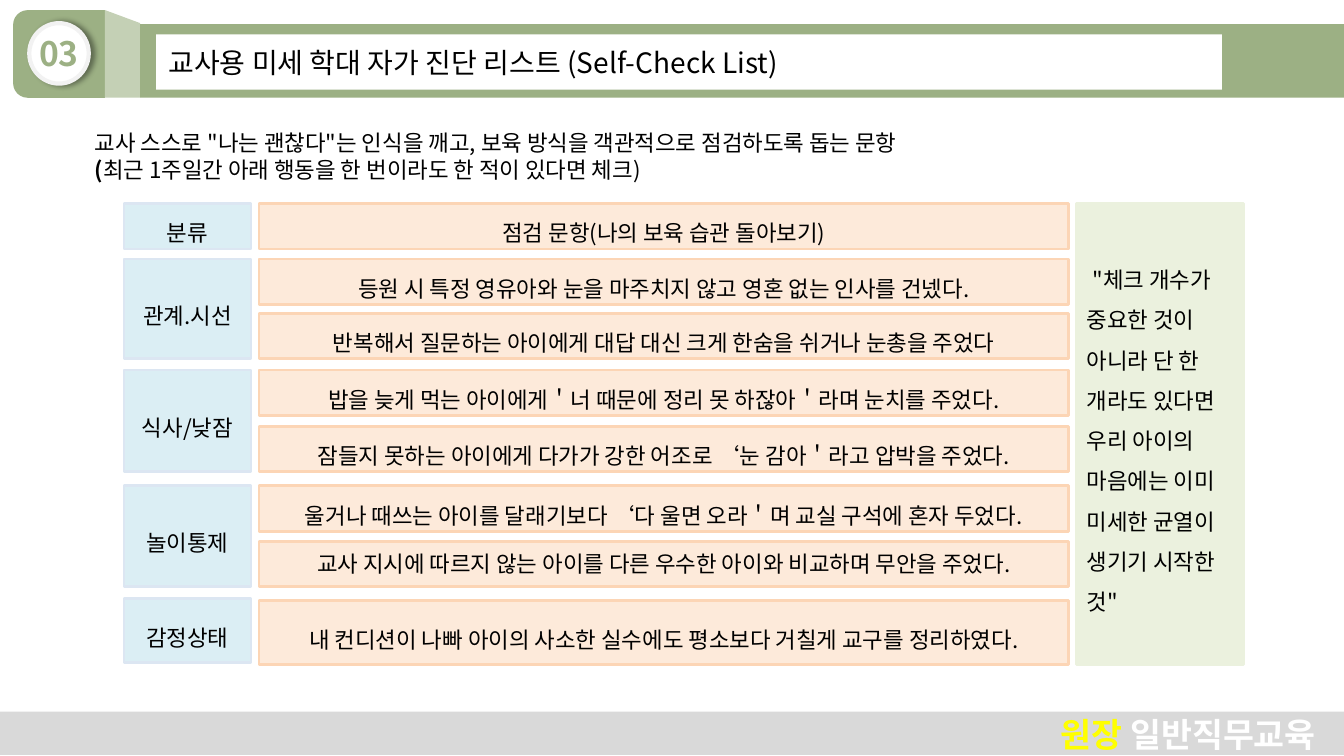
from typing import NamedTuple

from lxml import etree
from pptx import Presentation
from pptx.dml.color import RGBColor
from pptx.enum import shapes, text
from pptx.oxml import ns
from pptx.util import Inches, Pt

BLACK = RGBColor(0x00, 0x00, 0x00)
WHITE = RGBColor(0xFF, 0xFF, 0xFF)
YELLOW = RGBColor(0xFF, 0xFF, 0x00)
GREEN = RGBColor(0x9C, 0xB0, 0x84)
PALE_GREEN = RGBColor(0xC4, 0xD0, 0xB5)
FOOTER_GREY = RGBColor(0xD9, 0xD9, 0xD9)
BADGE_RING = RGBColor(0xF2, 0xF2, 0xF2)
NOTE_GREEN = RGBColor(0xEB, 0xF1, 0xDE)
ITEM_FILL, ITEM_LINE = RGBColor(0xFD, 0xEA, 0xDA), RGBColor(0xFC, 0xD5, 0xB5)
GROUP_FILL, GROUP_LINE = RGBColor(0xDB, 0xEE, 0xF4), RGBColor(0xDC, 0xE6, 0xF2)

KOREAN_FONT = "Noto Sans CJK KR"
BADGE_FONT = "Noto Sans CJK SC"
RECTANGLE = shapes.MSO_SHAPE.RECTANGLE
LEFT, CENTER, RIGHT = text.PP_ALIGN.LEFT, text.PP_ALIGN.CENTER, text.PP_ALIGN.RIGHT


class Box(NamedTuple):
    left: float
    top: float
    width: float
    height: float


class Column(NamedTuple):
    left: float
    width: float
    fill: RGBColor
    line: RGBColor


class Cell(NamedTuple):
    column: Column
    top: float
    height: float
    label: str
    line_spacing: float = 1.5


GROUPS = Column(1.23, 1.26, GROUP_FILL, GROUP_LINE)
ITEMS = Column(2.57, 8.03, ITEM_FILL, ITEM_LINE)
NOTE = Column(10.68, 1.65, NOTE_GREEN, NOTE_GREEN)
ROW = 0.45

CELLS = [
    Cell(GROUPS, 2.02, ROW, "분류"),
    Cell(GROUPS, 2.57, 0.99, "관계.시선"),
    Cell(GROUPS, 3.67, 1.01, "식사/낮잠"),
    Cell(GROUPS, 4.82, 1.0, "놀이통제"),
    Cell(GROUPS, 5.94, 0.63, "감정상태"),
    Cell(ITEMS, 2.02, ROW, "점검 문항(나의 보육 습관 돌아보기)"),
    Cell(ITEMS, 2.57, ROW, "등원 시 특정 영유아와 눈을 마주치지 않고 영혼 없는 인사를 건넸다."),
    Cell(ITEMS, 3.11, ROW, "반복해서 질문하는 아이에게 대답 대신 크게 한숨을 쉬거나 눈총을 주었다"),
    Cell(ITEMS, 3.67, ROW, "밥을 늦게 먹는 아이에게＇너 때문에 정리 못 하잖아＇라며 눈치를 주었다."),
    Cell(ITEMS, 4.23, ROW, "잠들지 못하는 아이에게 다가가 강한 어조로 ‘눈 감아＇라고 압박을 주었다."),
    Cell(ITEMS, 4.82, ROW, "울거나 때쓰는 아이를 달래기보다 ‘다 울면 오라＇며 교실 구석에 혼자 두었다."),
    Cell(ITEMS, 5.37, ROW, "교사 지시에 따르지 않는 아이를 다른 우수한 아이와 비교하며 무안을 주었다.", 1.0),
    Cell(ITEMS, 5.96, 0.63, "내 컨디션이 나빠 아이의 사소한 실수에도 평소보다 거칠게 교구를 정리하였다."),
]
NOTE_TEXT = (
    "\"체크 개수가 중요한 것이 아니라 단 한 개라도 있다면\n"
    "우리 아이의 마음에는 이미 미세한 균열이 생기기 시작한 것\""
)


def paint(shape, fill: RGBColor, line: RGBColor | None = None, line_width: float = 2) -> None:
    shape.shadow.inherit = False
    shape.fill.solid()
    shape.fill.fore_color.rgb = fill
    if line is None:
        shape.line.fill.background()
    else:
        shape.line.color.rgb = line
        shape.line.width = Pt(line_width)


def add_block(slide, kind, box: Box, fill: RGBColor, line: RGBColor | None = None,
              line_width: float = 2):
    shape = slide.shapes.add_shape(kind, *map(Inches, box))
    paint(shape, fill, line, line_width)
    return shape


def style_run(run, size: float, color: RGBColor = BLACK, bold: bool = False,
              font: str = KOREAN_FONT) -> None:
    """Format a run, using the same font for Latin and East Asian letters."""
    run.font.size = Pt(size)
    run.font.bold = bold
    run.font.color.rgb = color
    run.font.name = font
    east_asian = etree.SubElement(run._r.get_or_add_rPr(), ns.qn("a:ea"))
    east_asian.set("typeface", font)


def write(shape, content: str, size: float = 16, align=LEFT, line_spacing: float = 1.0,
          color: RGBColor = BLACK, bold: bool = False, font: str = KOREAN_FONT):
    frame = shape.text_frame
    frame.text = content
    frame.word_wrap = True
    frame.vertical_anchor = text.MSO_ANCHOR.MIDDLE
    for paragraph in frame.paragraphs:
        paragraph.alignment = align
        paragraph.line_spacing = line_spacing
        for run in paragraph.runs:
            style_run(run, size, color, bold, font)
    return frame


def set_margins(frame, horizontal: float, vertical: float) -> None:
    frame.margin_left = frame.margin_right = Inches(horizontal)
    frame.margin_top = frame.margin_bottom = Inches(vertical)


def add_drop_shadow(shape) -> None:
    effects = shape._element.spPr.find(ns.qn("a:effectLst"))
    shadow = etree.SubElement(effects, ns.qn("a:outerShdw"), blurRad=str(Pt(4)),
                              dist=str(Pt(3)), dir="0", algn="l", rotWithShape="0")
    color = etree.SubElement(shadow, ns.qn("a:srgbClr"), val=str(BLACK))
    etree.SubElement(color, ns.qn("a:alpha"), val="40000")


def outline_text(run, color: RGBColor, width: float) -> None:
    line = etree.Element(ns.qn("a:ln"), w=str(Pt(width)))
    fill = etree.SubElement(line, ns.qn("a:solidFill"))
    etree.SubElement(fill, ns.qn("a:srgbClr"), val=str(color))
    run._r.get_or_add_rPr().insert(0, line)


def add_header(slide) -> None:
    tab = add_block(slide, shapes.MSO_SHAPE.ROUND_2_SAME_RECTANGLE,
                    Box(0.15, 0.08, 0.87, 0.91), GREEN)
    tab.rotation = 270

    builder = slide.shapes.build_freeform(Inches(1.04), Inches(0.97))
    corners = [(1.04, 0.1), (1.39, 0.23), (1.39, 0.97)]
    builder.add_line_segments([(Inches(x), Inches(y)) for x, y in corners], close=True)
    paint(builder.convert_to_shape(), PALE_GREEN)

    add_block(slide, RECTANGLE, Box(1.39, 0.24, 11.94, 0.73), GREEN)

    badge = add_block(slide, shapes.MSO_SHAPE.OVAL, Box(0.29, 0.23, 0.59, 0.6),
                      WHITE, BADGE_RING, 3)
    add_drop_shadow(badge)
    number = write(badge, "03", 24, CENTER, color=GREEN, bold=True, font=BADGE_FONT)
    set_margins(number, 0, 0)
    number.word_wrap = False

    title = add_block(slide, RECTANGLE, Box(1.55, 0.34, 10.57, 0.55), WHITE)
    set_margins(write(title, "교사용 미세 학대 자가 진단 리스트 (Self-Check List)", 20), 0.12, 0.06)


def add_footer(slide) -> None:
    add_block(slide, RECTANGLE, Box(0, 7.06, 13.33, 0.43), FOOTER_GREY)
    footer = slide.shapes.add_textbox(*map(Inches, Box(6.59, 7.03, 6.66, 0.5)))
    frame = write(footer, "원장", 24, RIGHT, color=YELLOW, bold=True)
    frame.margin_right = Inches(0.2)
    paragraph = frame.paragraphs[0]
    outline_text(paragraph.runs[0], WHITE, 0.75)
    course = paragraph.add_run()
    course.text = " 일반직무교육"
    style_run(course, 24, WHITE, True)


def add_introduction(slide) -> None:
    introduction = slide.shapes.add_textbox(*map(Inches, Box(0.84, 1.23, 8.76, 0.64)))
    frame = write(introduction, "교사 스스로 \"나는 괜찮다\"는 인식을 깨고, "
                  "보육 방식을 객관적으로 점검하도록 돕는 문항\n(")
    frame.word_wrap = False
    paragraph = frame.paragraphs[1]
    paragraph.runs[0].font.bold = True
    instruction = paragraph.add_run()
    instruction.text = "최근 1주일간 아래 행동을 한 번이라도 한 적이 있다면 체크)"
    style_run(instruction, 16)


def add_cell(slide, cell: Cell, align=CENTER):
    column = cell.column
    box = Box(column.left, cell.top, column.width, cell.height)
    shape = add_block(slide, RECTANGLE, box, column.fill, column.line)
    return write(shape, cell.label, align=align, line_spacing=cell.line_spacing)


def main() -> None:
    presentation = Presentation()
    presentation.slide_width, presentation.slide_height = Inches(13.33), Inches(7.5)
    slide = presentation.slides.add_slide(presentation.slide_layouts[6])
    add_footer(slide)
    add_header(slide)
    add_introduction(slide)
    for cell in CELLS:
        add_cell(slide, cell)
    note = add_cell(slide, Cell(NOTE, 2.02, 4.57, NOTE_TEXT), LEFT)
    note.paragraphs[0]._p.get_or_add_pPr().set("indent", str(Inches(0.06)))
    presentation.save("out.pptx")


if __name__ == "__main__":
    main()
